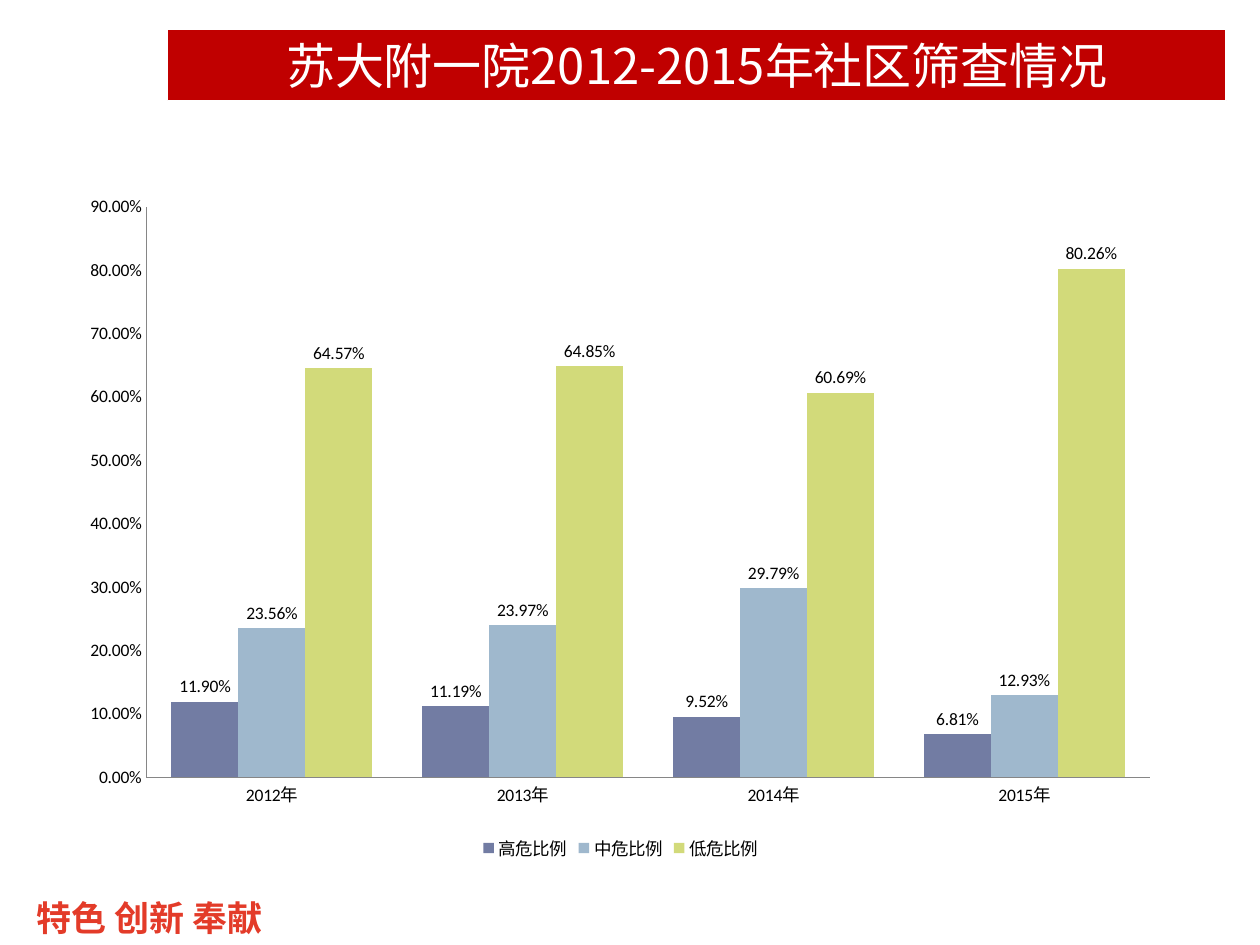
import pptx
import pptx.chart.data
import pptx.dml.color
import pptx.enum.chart
import pptx.enum.text
import pptx.oxml
import pptx.oxml.ns
import pptx.util

Pt = pptx.util.Pt


def color(value):
    return pptx.dml.color.RGBColor.from_string(value)


class ScreeningSlide:
    heading_font = "Noto Sans CJK SC"
    chart_font = "Calibri"
    white, black, gray = "FFFFFF", "000000", "868686"
    banner_red, motto_red = "C00000", "E33B29"

    def __init__(self, presentation):
        self.slide = presentation.slides.add_slide(presentation.slide_layouts[5])

    def set_text(self, frame, text, size, text_color, bold, align):
        frame.word_wrap = True
        frame.auto_size = pptx.enum.text.MSO_AUTO_SIZE.NONE
        frame.vertical_anchor = pptx.enum.text.MSO_ANCHOR.MIDDLE
        frame.margin_top = frame.margin_bottom = 0
        paragraph = frame.paragraphs[0]
        paragraph.text = text
        paragraph.alignment = align
        font = paragraph.font
        font.size = Pt(size)
        font.bold = bold
        font.name = self.heading_font
        font.color.rgb = color(text_color)
        east_asian = pptx.oxml.parse_xml(
            f'<a:ea {pptx.oxml.ns.nsdecls("a")} typeface="{self.heading_font}"/>')
        font._rPr.append(east_asian)

    def title(self, text, left, top, width, height):
        banner = self.slide.shapes.title
        banner.left, banner.top = Pt(left), Pt(top)
        banner.width, banner.height = Pt(width), Pt(height)
        banner.fill.solid()
        banner.fill.fore_color.rgb = color(self.banner_red)
        banner.line.color.rgb = color(self.white)
        banner.line.width = Pt(0.75)
        self.set_text(banner.text_frame, text, 28, self.white, False,
                      pptx.enum.text.PP_ALIGN.CENTER)

    def motto(self, text, left, top, width, height):
        box = self.slide.shapes.add_textbox(Pt(left), Pt(top), Pt(width), Pt(height))
        box.text_frame.margin_left = Pt(21)
        self.set_text(box.text_frame, text, 20, self.motto_red, True,
                      pptx.enum.text.PP_ALIGN.LEFT)

    def style_font(self, font):
        font.size = Pt(10)
        font.name = self.chart_font
        font.color.rgb = color(self.black)

    def style_axis(self, axis):
        axis.has_major_gridlines = False
        axis.major_tick_mark = pptx.enum.chart.XL_TICK_MARK.NONE
        axis.minor_tick_mark = pptx.enum.chart.XL_TICK_MARK.NONE
        axis.format.line.color.rgb = color(self.gray)
        axis.format.line.width = Pt(0.75)
        self.style_font(axis.tick_labels.font)

    def place_plot(self, chart, x, y, w, h):
        places = "".join(f'<c:{key} val="{value}"/>'
                         for key, value in zip("xywh", (x, y, w, h)))
        layout = pptx.oxml.parse_xml(
            f'<c:layout {pptx.oxml.ns.nsdecls("c")}><c:manualLayout>'
            '<c:layoutTarget val="inner"/><c:xMode val="edge"/><c:yMode val="edge"/>'
            f'{places}</c:manualLayout></c:layout>')
        plot_area = chart._chartSpace.chart.plotArea
        for automatic in plot_area.findall(pptx.oxml.ns.qn("c:layout")):
            plot_area.remove(automatic)
        plot_area.insert(0, layout)

    def column_chart(self, categories, risk_levels, left, top, width, height):
        data = pptx.chart.data.CategoryChartData(number_format="0.00%")
        data.categories = categories
        for name, shares, _ in risk_levels:
            data.add_series(name, shares)
        chart = self.slide.shapes.add_chart(
            pptx.enum.chart.XL_CHART_TYPE.COLUMN_CLUSTERED,
            Pt(left), Pt(top), Pt(width), Pt(height), data).chart
        self.style_font(chart.font)
        chart.has_title = False
        chart.has_legend = True
        chart.legend.position = pptx.enum.chart.XL_LEGEND_POSITION.BOTTOM
        chart.legend.include_in_layout = False
        self.style_font(chart.legend.font)

        self.style_axis(chart.category_axis)
        shares_axis = chart.value_axis
        self.style_axis(shares_axis)
        shares_axis.minimum_scale, shares_axis.maximum_scale = 0, 0.9
        shares_axis.major_unit = 0.1
        shares_axis.tick_labels.number_format = "0.00%"
        shares_axis.tick_labels.number_format_is_linked = False

        plot = chart.plots[0]
        plot.gap_width, plot.overlap = 75, 0
        plot.vary_by_categories = False
        for series, (_, _, fill) in zip(plot.series, risk_levels):
            series.format.fill.solid()
            series.format.fill.fore_color.rgb = color(fill)
            series.invert_if_negative = False
            labels = series.data_labels
            labels.show_value = True
            labels.position = pptx.enum.chart.XL_LABEL_POSITION.OUTSIDE_END
            labels.number_format = "0.00%"
            labels.number_format_is_linked = False
            self.style_font(labels.font)
        self.place_plot(chart, 0.07, 0.03, 0.91, 0.84)


def main():
    presentation = pptx.Presentation()
    presentation.slide_width, presentation.slide_height = Pt(720), Pt(540)
    screening = ScreeningSlide(presentation)
    screening.motto("特色 创新 奉献", 0, 508.3, 304, 31.7)
    screening.column_chart(
        [f"{year}年" for year in range(2012, 2016)],
        [("高危比例", (0.119, 0.1119, 0.0952, 0.0681), "727CA3"),
         ("中危比例", (0.2356, 0.2397, 0.2979, 0.1293), "9FB8CD"),
         ("低危比例", (0.6457, 0.6485, 0.6069, 0.8026), "D2DA7A")],
        39.6, 106.6, 630, 388)
    screening.title("苏大附一院2012-2015年社区筛查情况", 95.8, 16.6, 604.8, 41)
    presentation.save("out.pptx")


if __name__ == "__main__":
    main()
